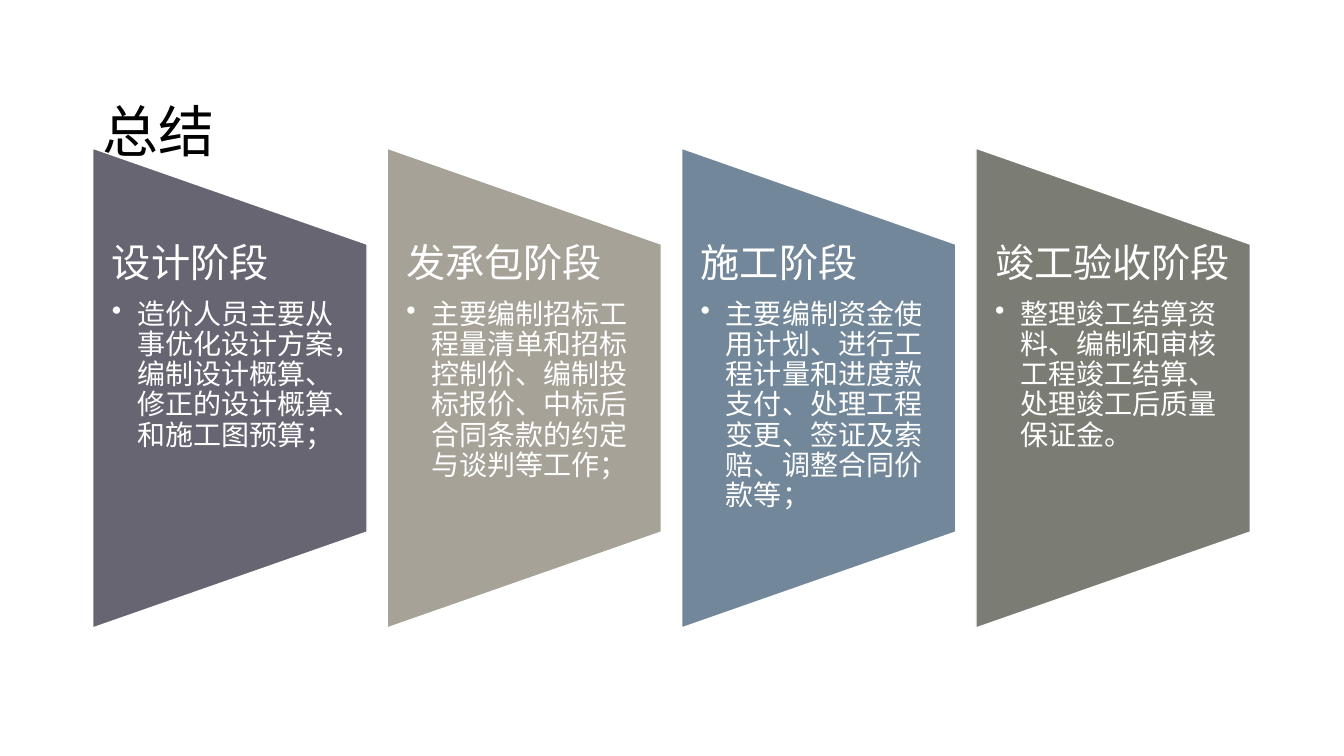
from pptx import Presentation
from pptx.dml.color import RGBColor
from pptx.enum.shapes import MSO_SHAPE
from pptx.enum.text import MSO_ANCHOR, PP_ALIGN
from pptx.oxml.ns import qn
from pptx.util import Inches, Pt
from lxml.etree import SubElement

FONT = "Noto Sans CJK SC"
WHITE = "FFFFFF"
LEFT, TOP, WIDTH, HEIGHT, PITCH = 0.92, 1.47, 2.72, 4.76, 2.92

STAGES = [
    ("设计阶段", "686573",
     "造价人员主要从事优化设计方案，编制设计概算、修正的设计概算、和施工图预算；"),
    ("发承包阶段", "A6A298",
     "主要编制招标工程量清单和招标控制价、编制投标报价、中标后合同条款的约定与谈判等工作；"),
    ("施工阶段", "728799",
     "主要编制资金使用计划、进行工程计量和进度款支付、处理工程变更、签证及索赔、调整合同价款等；"),
    ("竣工验收阶段", "7B7C74",
     "整理竣工结算资料、编制和审核工程竣工结算、处理竣工后质量保证金。"),
]


def rgb(value):
    return RGBColor.from_string(value)


def add_run(p, text, size, color, font, ea=FONT):
    r = p.add_run()
    r.text = text
    r.font.size = Pt(size)
    r.font.color.rgb = rgb(color)
    r.font.name = font
    SubElement(r.font._element, qn("a:ea")).set("typeface", ea)


def add_title(s, text):
    title = s.shapes.title
    title.left, title.top = Inches(LEFT), Inches(0.4)
    title.width, title.height = Inches(11.5), Inches(1.45)
    tf = title.text_frame
    tf.vertical_anchor = MSO_ANCHOR.MIDDLE
    p = tf.paragraphs[0]
    p.alignment = PP_ALIGN.LEFT
    p.line_spacing = 1.5
    add_run(p, text, 40, "000000", "Times New Roman")


def add_panel(s, left, color):
    # The preset is drawn lying down, then turned about its centre
    sp = s.shapes.add_shape(
        MSO_SHAPE.FLOWCHART_MANUAL_OPERATION,
        Inches(left + (WIDTH - HEIGHT) / 2), Inches(TOP + (HEIGHT - WIDTH) / 2),
        Inches(HEIGHT), Inches(WIDTH))
    sp.rotation = 270
    sp.shadow.inherit = False
    sp.fill.solid()
    sp.fill.fore_color.rgb = rgb(color)
    sp.line.color.rgb = rgb(WHITE)
    sp.line.width = Pt(1)


def add_bullet(p):
    pPr = p._p.get_or_add_pPr()
    pPr.set("marL", str(Inches(0.25)))
    pPr.set("indent", str(Inches(-0.25)))
    SubElement(pPr, qn("a:buChar")).set("char", "•")


def add_stage_text(s, left, heading, detail):
    box = s.shapes.add_textbox(Inches(left), Inches(2.42), Inches(WIDTH), Inches(2.86))
    tf = box.text_frame
    tf.word_wrap = True
    tf.margin_left = tf.margin_right = Inches(0.19)
    tf.margin_top = tf.margin_bottom = 0
    head, body = tf.paragraphs[0], tf.add_paragraph()
    for p, text, size, after in ((head, heading, 28, 9.8), (body, detail, 20, 3)):
        p.line_spacing = 0.9
        p.space_after = Pt(after)
        add_run(p, text, size, WHITE, FONT)
    body.level = 1
    add_bullet(body)


def main():
    prs = Presentation()
    prs.slide_width, prs.slide_height = Inches(13.33), Inches(7.5)
    s = prs.slides.add_slide(prs.slide_layouts[5])
    add_title(s, "总结")

    # One panel per project stage, evenly spaced
    for i, (heading, color, detail) in enumerate(STAGES):
        left = LEFT + i * PITCH
        add_panel(s, left, color)
        add_stage_text(s, left, heading, detail)

    prs.save("out.pptx")


if __name__ == "__main__":
    main()
